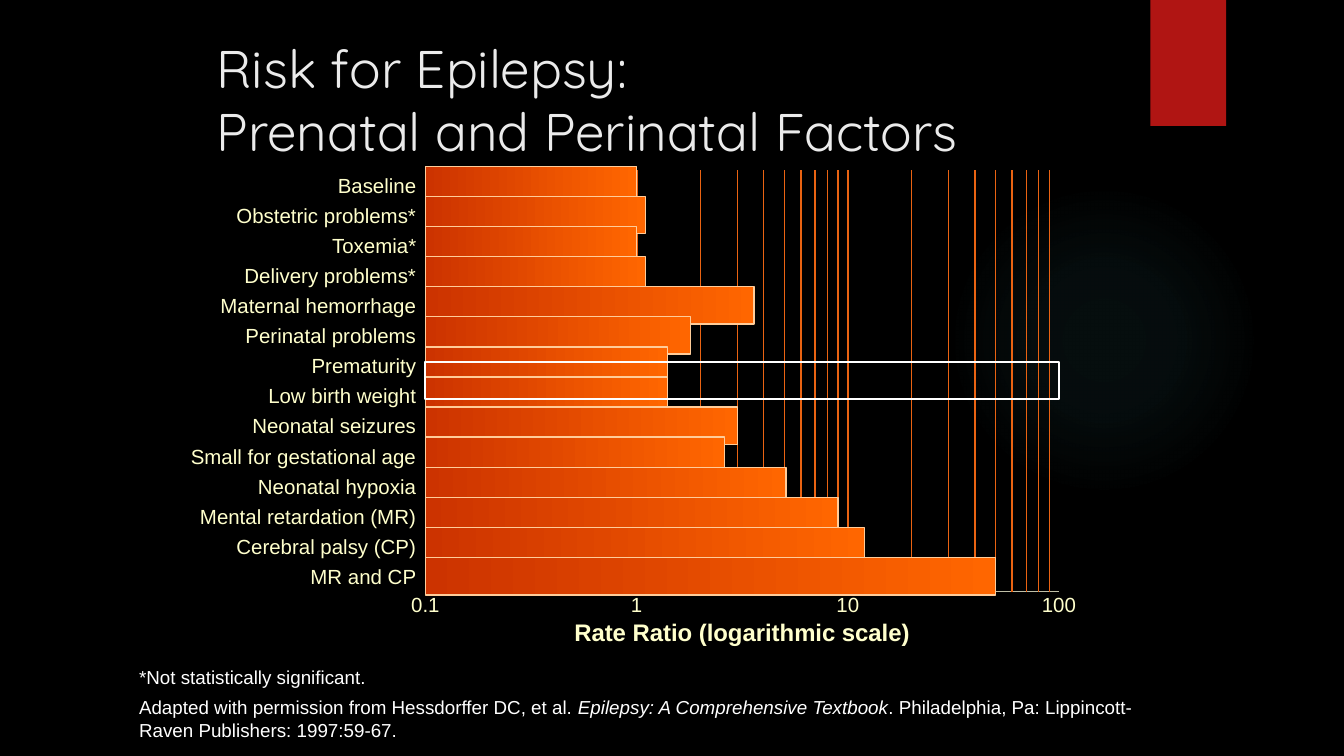
from math import log10

from lxml import etree
from pptx import Presentation
from pptx.dml.color import RGBColor
from pptx.enum.shapes import MSO_CONNECTOR, MSO_SHAPE
from pptx.enum.text import MSO_ANCHOR as ANCHOR, PP_ALIGN as ALIGN
from pptx.oxml import parse_xml
from pptx.oxml.ns import nsdecls, qn
from pptx.util import Pt

# Content
TITLE = "Risk for Epilepsy:\vPrenatal and Perinatal Factors"
RATE_RATIOS = [
    ("Baseline", 1),
    ("Obstetric problems*", 1.1),
    ("Toxemia*", 1),
    ("Delivery problems*", 1.1),
    ("Maternal hemorrhage", 3.6),
    ("Perinatal problems", 1.8),
    ("Prematurity", 1.4),
    ("Low birth weight", 1.4),
    ("Neonatal seizures", 3),
    ("Small for gestational age", 2.6),
    ("Neonatal hypoxia", 5.1),
    ("Mental retardation (MR)", 9),
    ("Cerebral palsy (CP)", 12),
    ("MR and CP", 50),
]
TICKS = [0.1, 1, 10, 100]
AXIS_TITLE = "Rate Ratio (logarithmic scale)"
FOOTNOTES = [
    [("*Not statistically significant.", False)],
    [("Adapted with permission from Hessdorffer DC, et al. ", False),
     ("Epilepsy: A Comprehensive Textbook", True),
     (". Philadelphia, Pa: Lippincott-Raven Publishers: 1997:59-67.", False)],
]
GLOW_STOPS = [(0, 7), (36, 6), (69, 0)]  # position and opacity in percent

# Layout in points
PLOT_LEFT, PLOT_TOP, AXIS_Y = 303.9, 121.7, 422.6
DECADE = 150.84
BAR_TOP, BAR_HEIGHT, ROW_PITCH = 118.8, 26.64, 21.5
LABEL_LEFT, LABEL_WIDTH, LABEL_HEIGHT = 132.4, 165, 18
LABEL_OFFSET = 4.3
TICK_WIDTH = 32

CREAM, WHITE, GRID = "FFFFCC", "FFFFFF", "EA6312"


def color(value):
    return RGBColor.from_string(value)


def x_at(ratio):
    return PLOT_LEFT + DECADE * (log10(ratio) + 1)


def add_block(kind, left, top, width, height, fill=None, line=None, weight=1):
    shape = slide.shapes.add_shape(kind, Pt(left), Pt(top), Pt(width), Pt(height))
    shape.shadow.inherit = False
    if fill:
        shape.fill.solid()
        shape.fill.fore_color.rgb = color(fill)
    else:
        shape.fill.background()
    if line:
        shape.line.color.rgb = color(line)
        shape.line.width = Pt(weight)
    else:
        shape.line.fill.background()
    return shape


def add_line(x1, y1, x2, y2, line, weight=1):
    connector = slide.shapes.add_connector(
        MSO_CONNECTOR.STRAIGHT, Pt(x1), Pt(y1), Pt(x2), Pt(y2))
    connector.line.color.rgb = color(line)
    connector.line.width = Pt(weight)
    etree.SubElement(connector._element.spPr, qn("a:effectLst"))


def add_text(left, top, width, height, paragraphs, size, fill, font="Arial",
             align=ALIGN.LEFT, anchor=ANCHOR.TOP, insets=(0, 0, 0, 0),
             wrap=False, bold=False, gap=0):
    box = slide.shapes.add_textbox(Pt(left), Pt(top), Pt(width), Pt(height))
    frame = box.text_frame
    frame.word_wrap = wrap
    frame.vertical_anchor = anchor
    frame.margin_left, frame.margin_top, frame.margin_right, frame.margin_bottom = map(Pt, insets)
    for index, content in enumerate(paragraphs):
        paragraph = frame.add_paragraph() if index else frame.paragraphs[0]
        if isinstance(content, str):
            paragraph.text = content
        else:
            for text, italic in content:
                run = paragraph.add_run()
                run.text = text
                run.font.italic = italic
        paragraph.alignment = align
        if index:
            paragraph.space_before = Pt(gap)
        paragraph.font.name = font
        paragraph.font.size = Pt(size)
        paragraph.font.bold = bold
        paragraph.font.color.rgb = color(fill)


presentation = Presentation()
presentation.slide_width, presentation.slide_height = Pt(960), Pt(540)
slide = presentation.slides.add_slide(presentation.slide_layouts[6])
slide.background.fill.solid()
slide.background.fill.fore_color.rgb = color("000000")

# Background glow and red tab
glow = add_block(MSO_SHAPE.OVAL, 677.5, 131.8, 221.8, 221.8)
stops = "".join(
    f'<a:gs pos="{position * 1000}"><a:srgbClr val="50B9C1">'
    f'<a:alpha val="{opacity * 1000}"/></a:srgbClr></a:gs>'
    for position, opacity in GLOW_STOPS)
glow_fill = parse_xml(
    f'<a:gradFill {nsdecls("a")}><a:gsLst>{stops}</a:gsLst><a:path path="circle">'
    '<a:fillToRect l="50000" t="50000" r="50000" b="50000"/></a:path></a:gradFill>')
glow_properties = glow._element.spPr
glow_properties.replace(glow_properties.find(qn("a:noFill")), glow_fill)
add_block(MSO_SHAPE.RECTANGLE, 821.8, 0, 54, 90, "B01513")

# Title and footnotes
add_text(147.6, 21.6, 664.6, 90, [TITLE], 37.8, "EBEBEB", "Quicksand",
         insets=(7.2, 3.6, 7.2, 3.6), wrap=True)
add_text(64, 473.8, 781.2, 79.9, FOOTNOTES, 13.4, WHITE, anchor=ANCHOR.BOTTOM,
         insets=(35.3, 0, 35.3, 24.5), wrap=True, gap=5.4)

# Axis labels
for tick in TICKS:
    add_text(x_at(tick) - TICK_WIDTH / 2, AXIS_Y, TICK_WIDTH, LABEL_HEIGHT,
             [str(tick)], 14.6, CREAM, align=ALIGN.CENTER)
add_text(409, 441.4, 242, 21, [AXIS_TITLE], 17.1, CREAM, align=ALIGN.CENTER, bold=True)

# Axis and logarithmic gridlines
add_line(PLOT_LEFT, AXIS_Y, x_at(100), AXIS_Y, "BFBFA7")
for start in TICKS[:-1]:
    for multiple in range(2, 11):
        ratio = start * multiple
        if ratio < TICKS[-1]:
            add_line(x_at(ratio), AXIS_Y, x_at(ratio), PLOT_TOP, GRID,
                     1.5 if multiple == 10 else 1)

# Bars and their labels
for row, (label, ratio) in enumerate(RATE_RATIOS):
    top = BAR_TOP + row * ROW_PITCH
    bar = add_block(MSO_SHAPE.RECTANGLE, PLOT_LEFT, top, x_at(ratio) - PLOT_LEFT,
                    BAR_HEIGHT, line="FFCC99")
    bar.fill.gradient()
    bar.fill.gradient_angle = 0
    for stop, shade in zip(bar.fill.gradient_stops, ("CC3300", "FF6600")):
        stop.color.rgb = color(shade)
    add_text(LABEL_LEFT, top + LABEL_OFFSET, LABEL_WIDTH, LABEL_HEIGHT, [label],
             14.6, CREAM, align=ALIGN.RIGHT, anchor=ANCHOR.MIDDLE)

# Highlight frame
add_block(MSO_SHAPE.RECTANGLE, PLOT_LEFT, 258.5, x_at(100) - PLOT_LEFT, BAR_HEIGHT,
          line=WHITE, weight=1.5)

presentation.save("out.pptx")
